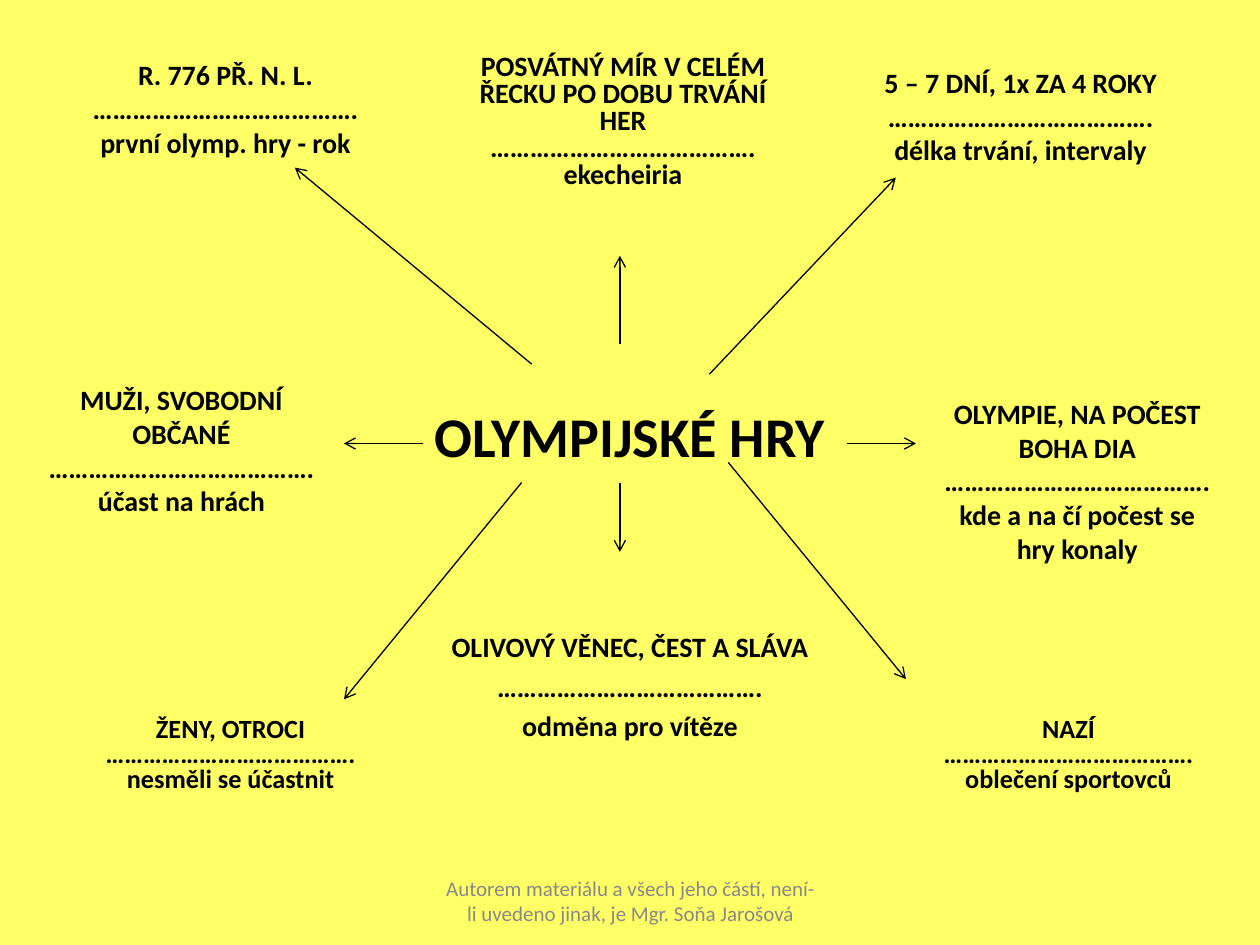
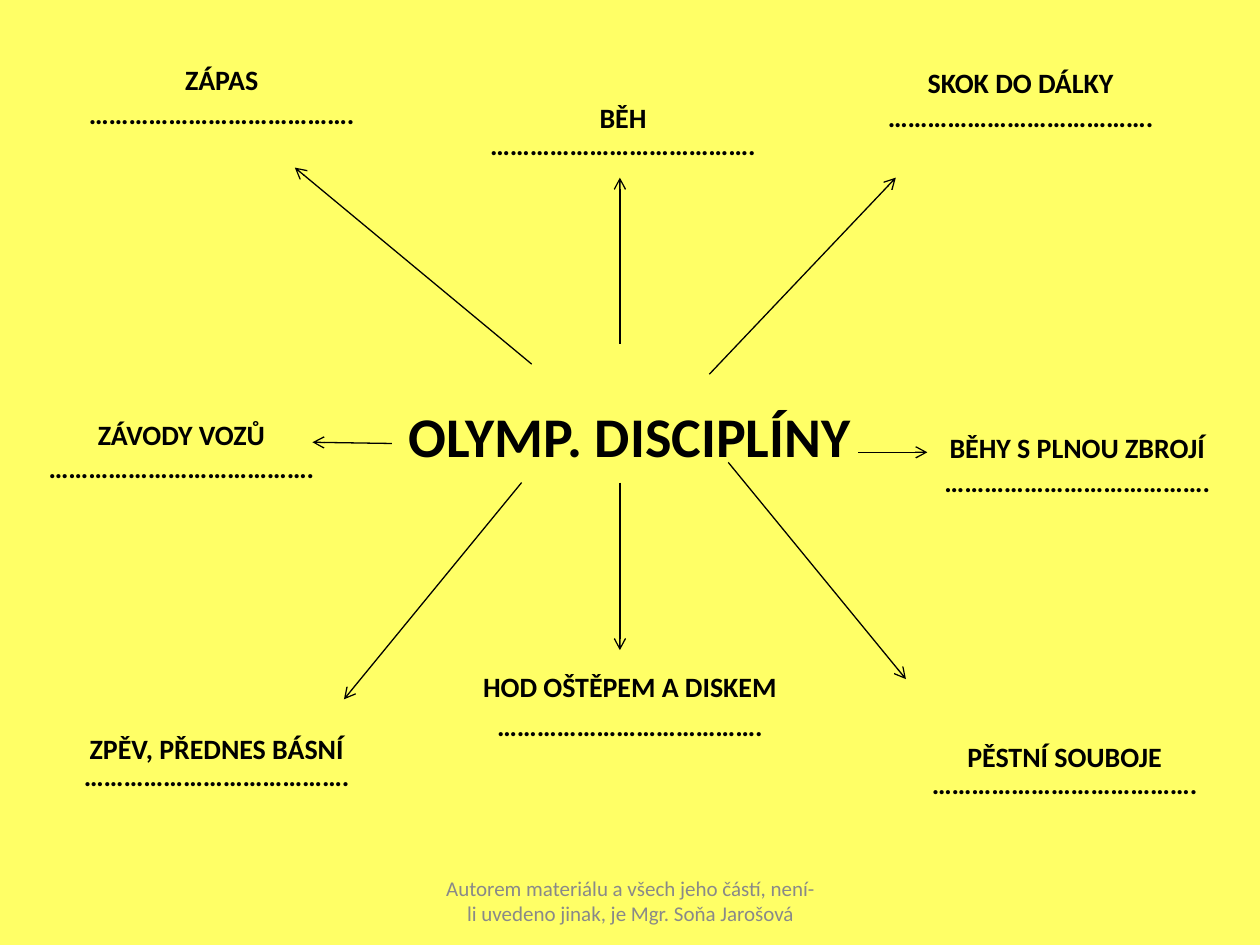
from lxml import etree
from pptx import Presentation
from pptx.dml.color import RGBColor
from pptx.enum.shapes import MSO_CONNECTOR
from pptx.enum.text import MSO_ANCHOR, MSO_AUTO_SIZE, PP_ALIGN
from pptx.oxml.ns import qn
from pptx.util import Inches, Pt

STRAIGHT = MSO_CONNECTOR.STRAIGHT
TOP, MIDDLE = MSO_ANCHOR.TOP, MSO_ANCHOR.MIDDLE
NO_FIT = MSO_AUTO_SIZE.NONE
CENTER = PP_ALIGN.CENTER

YELLOW, BLACK, GREY = "FFFF66", "000000", "898989"
FONT = "Calibri"
DOTS = "…………………………………."
FOOTER = "Autorem materiálu a všech jeho částí, není-li uvedeno jinak, je Mgr. Soňa Jarošová"
DIAGONALS = [
    (5.78, 3.67, 7.19, 5.39),
    (4.14, 3.83, 2.73, 5.55),
    (4.22, 2.89, 2.34, 1.33),
    (5.63, 2.97, 7.11, 1.41),
]


def rgb(color):
    return RGBColor.from_string(color)


def write(tf, lines, size=16, color=BLACK, bold=True, spacing=1.0, after=0,
          anchor=TOP, margin=0):
    tf.word_wrap = True
    tf.auto_size = NO_FIT
    tf.vertical_anchor = anchor
    tf.margin_top = tf.margin_bottom = Inches(margin)
    for i, line in enumerate(lines):
        p = tf.paragraphs[0] if i == 0 else tf.add_paragraph()
        p.alignment = CENTER
        p.line_spacing = spacing
        p.space_before = Pt(0)
        p.space_after = Pt(after)
        r = p.add_run()
        r.text = line
        r.font.name = FONT
        r.font.size = Pt(size)
        r.font.bold = bold
        r.font.color.rgb = rgb(color)


class Deck:
    def __init__(self):
        self.prs = Presentation()
        self.prs.slide_width = Inches(10)
        self.prs.slide_height = Inches(7.5)
        fill = self.prs.slide_master.background.fill
        fill.solid()
        fill.fore_color.rgb = rgb(YELLOW)
        self.s = None

    def place(self, sp, x, y, w, h):
        sp.left, sp.top, sp.width, sp.height = (Inches(v) for v in (x, y, w, h))

    def text(self, x, y, w, h, lines, **style):
        sp = self.s.shapes.add_textbox(Inches(x), Inches(y), Inches(w), Inches(h))
        write(sp.text_frame, lines, **style)

    def title(self, heading):
        sp = self.s.shapes.title
        self.place(sp, 3.1, 3.1, 3.8, 0.7)
        write(sp.text_frame, [heading], size=32, anchor=MIDDLE)

    def body(self, y, lines):
        sp = self.s.placeholders[1]
        self.place(sp, 2.5, y, 5, 1)
        write(sp.text_frame, lines, after=3.2)
        for p in sp.text_frame.paragraphs:
            pPr = p._p.get_or_add_pPr()
            pPr.set("marL", "0")
            pPr.set("indent", "0")
            etree.SubElement(pPr, qn("a:buNone"))

    def topic(self, x, y, lines, w=2.42, h=0.85, **style):
        self.text(x, y, w, h, lines, **style)

    def arrow(self, x1, y1, x2, y2):
        c = self.s.shapes.add_connector(
            STRAIGHT, Inches(x1), Inches(y1), Inches(x2), Inches(y2))
        c.line.color.rgb = rgb(BLACK)
        c.line.width = Pt(0.75)
        etree.SubElement(c.line._get_or_add_ln(), qn("a:tailEnd"), type="arrow")
        etree.SubElement(c._element.spPr, qn("a:effectLst"))

    def mind_map(self, heading, bottom, topics, arrows):
        self.s = self.prs.slides.add_slide(self.prs.slide_layouts[1])
        self.title(heading)
        self.body(*bottom)
        for x, y, lines, style in topics:
            self.topic(x, y, lines, **style)
        for ends in DIAGONALS + arrows:
            self.arrow(*ends)
        self.text(3.42, 6.95, 3.17, 0.4, [FOOTER], size=12, color=GREY,
                  bold=False, anchor=MIDDLE, margin=0.05)


def main():
    deck = Deck()
    tight = {"spacing": 0.8}
    small = {"spacing": 0.8, "size": 15}
    deck.mind_map(
        "OLYMPIJSKÉ HRY",
        (5.0, ["OLIVOVÝ VĚNEC, ČEST A SLÁVA", DOTS, "odměna pro vítěze"]),
        [
            (0.23, 0.46, ["R. 776 PŘ. N. L.", DOTS, "první olymp. hry - rok"], {"w": 3.12}),
            (3.58, 0.44, ["POSVÁTNÝ MÍR V CELÉM ŘECKU PO DOBU TRVÁNÍ HER", DOTS, "ekecheiria"],
             {"w": 2.73, "h": 1.1, **tight}),
            (6.89, 0.52, ["5 – 7 DNÍ, 1x ZA 4 ROKY", DOTS, "délka trvání, intervaly"], {}),
            (7.34, 3.15, ["OLYMPIE, NA POČEST BOHA DIA", DOTS, "kde a na čí počest se hry konaly"],
             {"h": 1.4}),
            (7.27, 5.7, ["NAZÍ", DOTS, "oblečení sportovců"], small),
            (0.23, 3.04, ["MUŽI, SVOBODNÍ OBČANÉ", DOTS, "účast na hrách"], {"h": 1.1}),
            (0.62, 5.7, ["ŽENY, OTROCI", DOTS, "nesměli se účastnit"], small),
        ],
        [
            (4.92, 3.83, 4.92, 4.38),
            (6.72, 3.52, 7.27, 3.52),
            (3.36, 3.52, 2.73, 3.52),
            (4.92, 2.73, 4.92, 2.03),
        ],
    )
    deck.mind_map(
        "OLYMP. DISCIPLÍNY",
        (5.31, ["HOD OŠTĚPEM A DISKEM", DOTS]),
        [
            (0.2, 0.5, ["ZÁPAS", DOTS], {"w": 3.12}),
            (3.58, 0.85, ["BĚH", DOTS], {"w": 2.73, "h": 0.5, **tight}),
            (6.89, 0.52, ["SKOK DO DÁLKY", DOTS], {}),
            (7.34, 3.42, ["BĚHY S PLNOU ZBROJÍ", DOTS], {}),
            (7.2, 5.92, ["PĚSTNÍ SOUBOJE", DOTS], {"w": 2.5, **tight}),
            (0.23, 3.31, ["ZÁVODY VOZŮ", DOTS], {}),
            (0.51, 5.86, ["ZPĚV, PŘEDNES BÁSNÍ", DOTS], tight),
        ],
        [
            (4.92, 3.83, 4.92, 5.16),
            (6.81, 3.59, 7.36, 3.59),
            (3.11, 3.52, 2.48, 3.51),
            (4.92, 2.73, 4.92, 1.41),
        ],
    )
    deck.prs.save("out.pptx")


if __name__ == "__main__":
    main()
